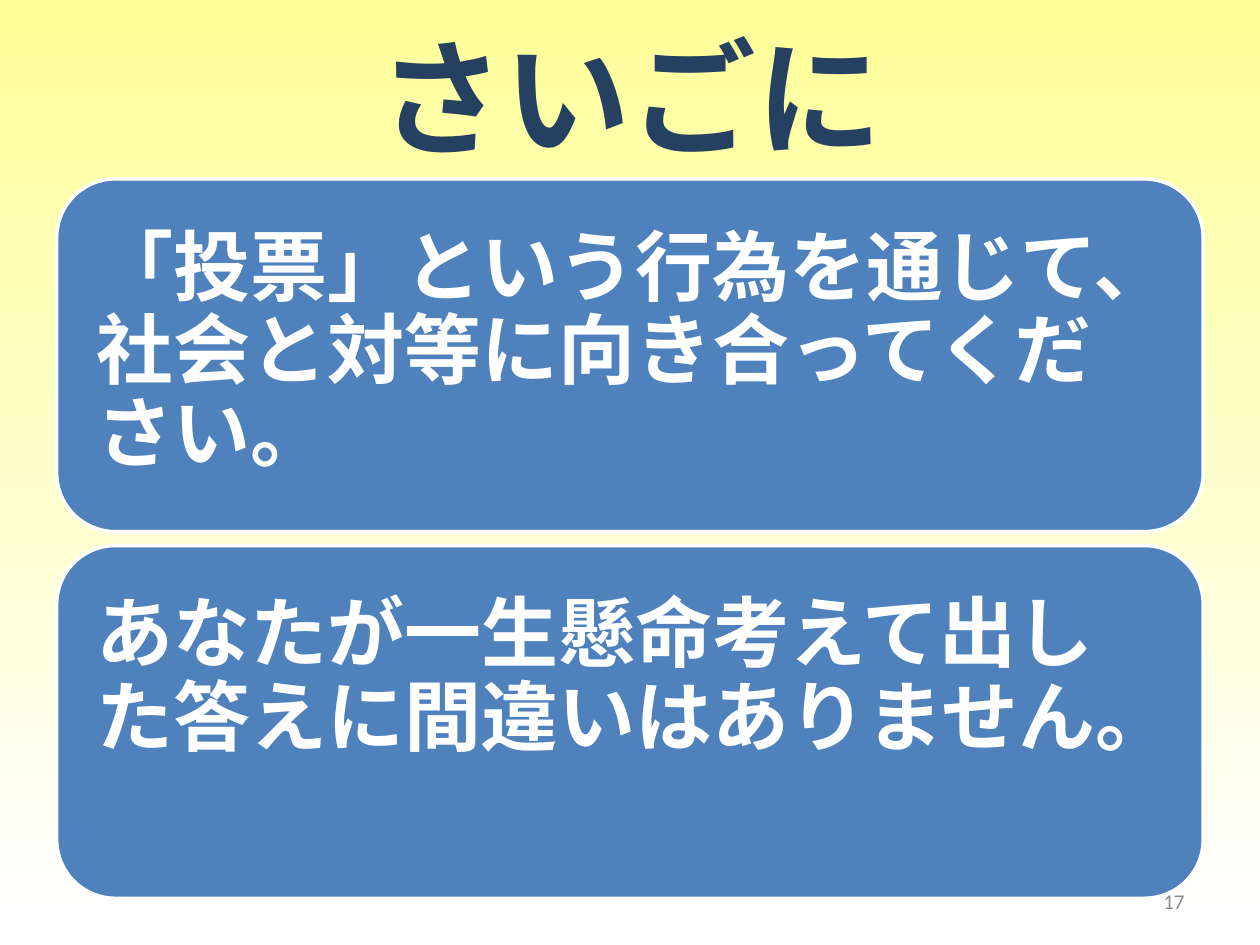
from dataclasses import dataclass

from pptx import Presentation
from pptx import util as u
from pptx.dml.color import RGBColor
from pptx.enum import shapes, text
from pptx.oxml.ns import qn


@dataclass(frozen=True)
class Theme:
    """Colours, fonts and type sizes of the slide."""
    navy: str = "254061"
    blue: str = "4F81BD"
    white: str = "FFFFFF"
    yellow: str = "FFFF99"
    grey: str = "8C8C8C"
    japanese: str = "Noto Sans CJK JP"
    latin: str = "Calibri"
    title_size: int = 72
    message_size: int = 44
    number_size: int = 12


THEME = Theme()
MESSAGES = (
    "「投票」という行為を通じて、社会と対等に向き合ってください。",
    "あなたが一生懸命考えて出した答えに間違いはありません。",
)


def format_text(paragraph, font_name, size, color, bold=False):
    """Format every run of a paragraph, for Latin and East Asian script."""
    for run in paragraph.runs:
        font = run.font
        font.name, font.size, font.bold = font_name, u.Pt(size), bold
        font.color.rgb = RGBColor.from_string(color)
        east_asian = run._r.get_or_add_rPr().makeelement(
            qn("a:ea"), {"typeface": font_name})
        run._r.rPr.find(qn("a:latin")).addnext(east_asian)


def set_background(slide):
    """Fade the background from yellow at the top to white."""
    fill = slide.background.fill
    fill.gradient()
    fill.gradient_angle = 270
    stops = ((0, THEME.yellow), (0.98, THEME.white))
    for stop, (position, color) in zip(fill.gradient_stops, stops):
        stop.position = position
        stop.color.rgb = RGBColor.from_string(color)


def set_title(slide, wording):
    """Place and format the title placeholder."""
    title = slide.shapes.title
    title.left, title.top = u.Inches(0.5), u.Inches(0.13)
    title.width, title.height = u.Inches(9), u.Inches(1.25)
    frame = title.text_frame
    frame.text = wording
    frame.vertical_anchor = text.MSO_ANCHOR.MIDDLE
    paragraph = frame.paragraphs[0]
    paragraph.alignment = text.PP_ALIGN.CENTER
    format_text(paragraph, THEME.japanese, THEME.title_size, THEME.navy, True)


def add_slide_number(slide, number):
    """Add the slide number at the bottom right."""
    box = slide.shapes.add_textbox(
        u.Inches(7.17), u.Inches(6.95), u.Inches(2.33), u.Inches(0.4))
    frame = box.text_frame
    frame.word_wrap = True
    frame.vertical_anchor = text.MSO_ANCHOR.MIDDLE
    frame.text = number
    paragraph = frame.paragraphs[0]
    paragraph.alignment = text.PP_ALIGN.RIGHT
    format_text(paragraph, THEME.latin, THEME.number_size, THEME.grey)


def add_message(slide, wording, top):
    """Add a rounded panel holding one message."""
    panel = slide.shapes.add_shape(
        shapes.MSO_SHAPE.ROUNDED_RECTANGLE,
        u.Inches(0.45), u.Inches(top), u.Inches(9.1), u.Inches(2.8))
    panel.shadow.inherit = False
    panel.fill.solid()
    panel.fill.fore_color.rgb = RGBColor.from_string(THEME.blue)
    panel.line.color.rgb = RGBColor.from_string(THEME.white)
    panel.line.width = u.Pt(2)
    frame = panel.text_frame
    frame.word_wrap = True
    frame.vertical_anchor = text.MSO_ANCHOR.TOP
    frame.margin_left = frame.margin_right = u.Inches(0.18)
    frame.margin_top = u.Inches(0.26)
    frame.text = wording
    paragraph = frame.paragraphs[0]
    paragraph.alignment = text.PP_ALIGN.LEFT
    paragraph.line_spacing = 0.9
    format_text(paragraph, THEME.japanese, THEME.message_size, THEME.white, True)


def main():
    """Build and save the closing slide."""
    presentation = Presentation()
    presentation.slide_width = u.Inches(10)
    presentation.slide_height = u.Inches(7.5)
    slide = presentation.slides.add_slide(presentation.slide_layouts[5])
    set_background(slide)
    set_title(slide, "さいごに")
    add_slide_number(slide, "17")
    for index, message in enumerate(MESSAGES):
        add_message(slide, message, 1.42 + index * 2.91)
    presentation.save("out.pptx")


if __name__ == "__main__":
    main()
